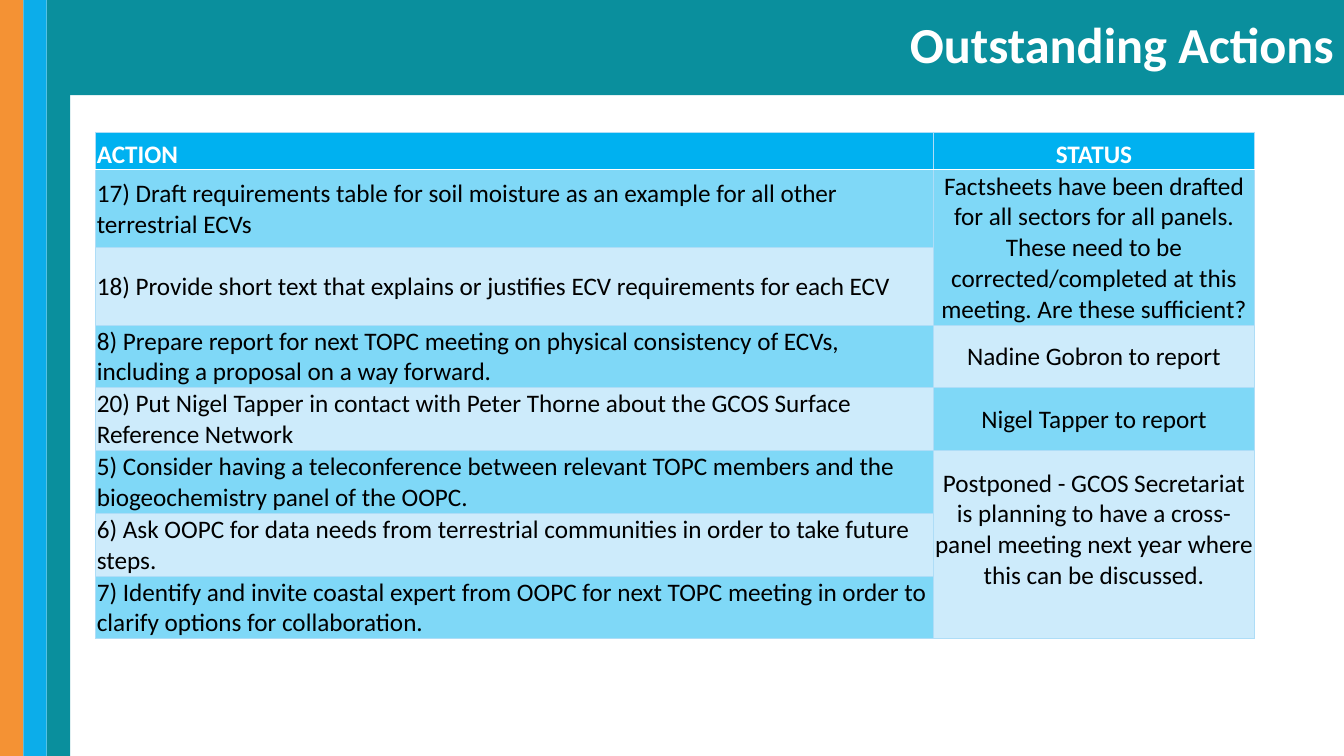
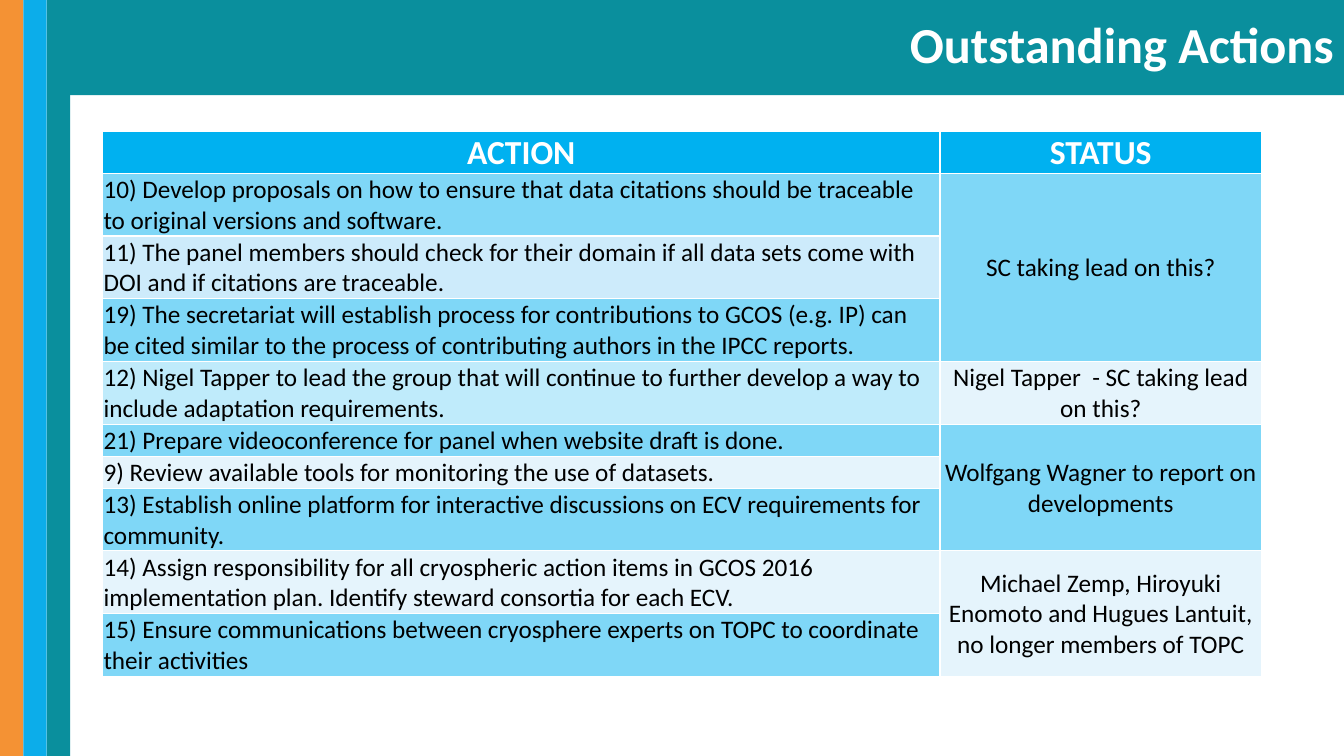
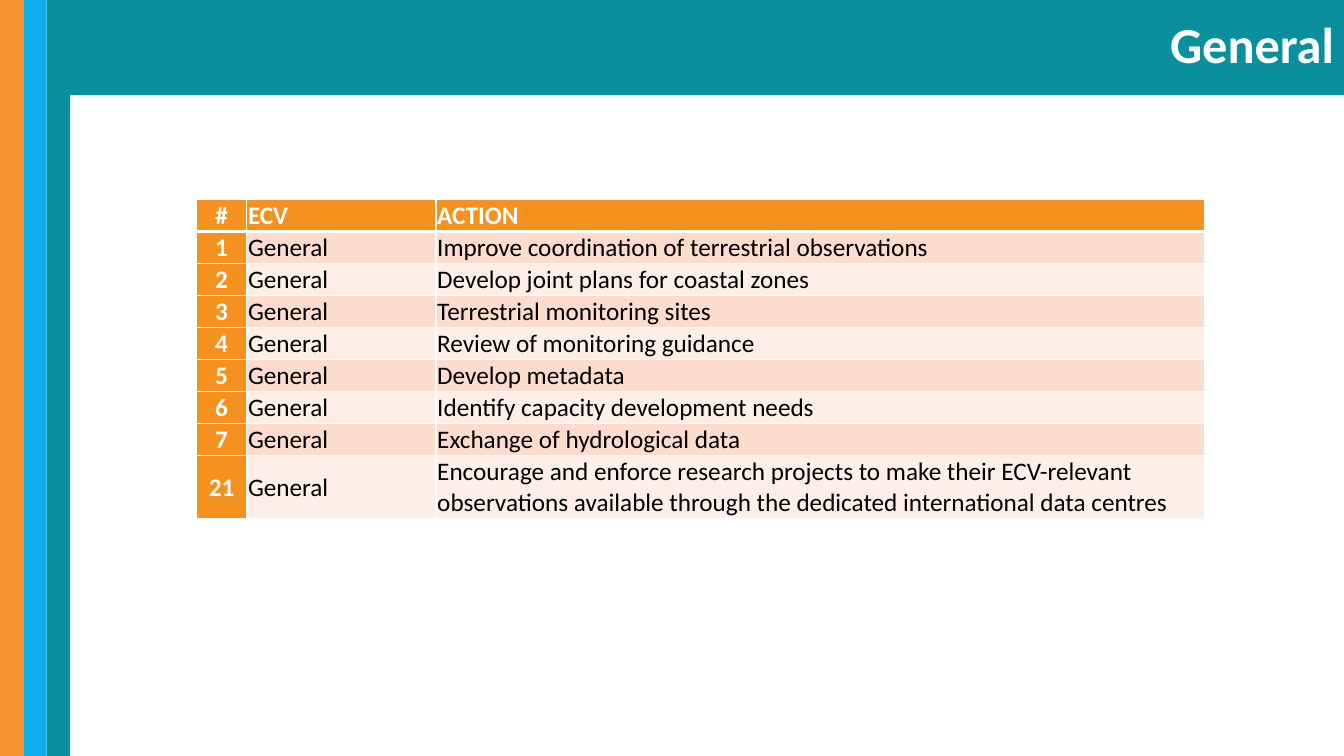
import lxml.etree
import pptx
import pptx.dml.color
import pptx.enum.shapes
import pptx.enum.text
import pptx.oxml.ns
import pptx.util

Cm, Pt = pptx.util.Cm, pptx.util.Pt
qn = pptx.oxml.ns.qn
ALIGN = pptx.enum.text.PP_ALIGN
ANCHOR = pptx.enum.text.MSO_ANCHOR
RECTANGLE = pptx.enum.shapes.MSO_SHAPE.RECTANGLE

WIDTH, HEIGHT = 33.87, 19.05
BAND_WIDTH = 0.59
FONT = "Calibri"
WHITE, BLACK = "FFFFFF", "000000"
ORANGE, SKY, TEAL = "F49234", "0CADEA", "0A8F9D"
HEADER_BLUE, MID_BLUE, PALE_BLUE, EDGE_BLUE = "00B1F0", "7FD8F7", "CDEBFB", "AEDDF7"
HEADER_ORANGE, PEACH, PALE_PEACH = "F5911E", "FBDCCD", "FDEEE8"
# A fill is a colour, or a colour with its opacity in percent
HALF_BLUE, QUARTER_BLUE, HALF_PALE = (HEADER_BLUE, 50), (HEADER_BLUE, 25), (PALE_BLUE, 50)

LINE, TWO_LINES = 0.8, 1.57
ACTION_COLUMNS = [21.11, 8.1]

BODY = {"name": FONT, "size": Pt(18), "bold": False, "color": BLACK}
HEADING = {**BODY, "bold": True, "color": WHITE}
BIG_HEADING = {**HEADING, "size": Pt(24)}
TITLE = {**HEADING, "size": Pt(36)}


def rgb(value):
    return pptx.dml.color.RGBColor.from_string(value)


def set_attributes(target, values):
    for name, value in values.items():
        setattr(target, name, value)


def write(frame, text, font, align):
    """Write each line of text as one paragraph."""
    for index, line in enumerate(text.split("\n")):
        para = frame.add_paragraph() if index else frame.paragraphs[0]
        para.alignment = align
        span = para.add_run()
        span.text = line
        set_attributes(span.font, {k: v for k, v in font.items() if k != "color"})
        span.font.color.rgb = rgb(font["color"])


def add_rectangle(slide, box, fill):
    shape = slide.shapes.add_shape(RECTANGLE, *map(Cm, box))
    shape.shadow.inherit = False
    shape.fill.solid()
    shape.fill.fore_color.rgb = rgb(fill)
    shape.line.fill.background()
    return shape


def add_framed_slide(deck, title):
    """Add a slide with the side bands and the title bar."""
    slide = deck.slides.add_slide(deck.slide_layouts[6])
    for index, fill in enumerate([ORANGE, SKY, TEAL]):
        add_rectangle(slide, (index * BAND_WIDTH, 0, BAND_WIDTH, HEIGHT), fill)
    left = 1.45
    frame = add_rectangle(slide, (left, 0, WIDTH - left, 2.4), TEAL).text_frame
    set_attributes(frame, {"word_wrap": True, "vertical_anchor": ANCHOR.MIDDLE})
    write(frame, title, TITLE, ALIGN.RIGHT)
    frame.paragraphs[0].line_spacing = 0.9
    return slide


def set_border(cell, side, color, width):
    properties = cell._tc.get_or_add_tcPr()
    line = lxml.etree.SubElement(properties, qn("a:ln" + side), w=str(Pt(width)))
    solid = lxml.etree.SubElement(line, qn("a:solidFill"))
    lxml.etree.SubElement(solid, qn("a:srgbClr"), val=color)


def add_grid(slide, place, widths, heights, border, header_width):
    """Add an unstyled table whose header is ruled off in white."""
    size = (sum(widths), sum(heights))
    table = slide.shapes.add_table(len(heights), len(widths), *map(Cm, place + size)).table
    set_attributes(table, {"first_row": False, "horz_banding": False})
    for column, width in zip(table.columns, widths):
        column.width = Cm(width)
    for number, (row, height) in enumerate(zip(table.rows, heights)):
        row.height = Cm(height)
        for cell in row.cells:
            for side in "LRTB":
                under_header = (number, side) in [(0, "B"), (1, "T")]
                set_border(cell, side, *((WHITE, header_width) if under_header else border))
    return table


def fill_cell(cell, text, fill, font=BODY, align=ALIGN.LEFT, anchor=ANCHOR.MIDDLE, bottom=0):
    inset = Cm(0.03)
    set_attributes(cell, {"margin_left": inset, "margin_right": inset, "margin_top": inset,
                          "margin_bottom": Cm(bottom), "vertical_anchor": anchor})
    color, opacity = (fill, 100) if isinstance(fill, str) else fill
    cell.fill.solid()
    cell.fill.fore_color.rgb = rgb(color)
    if opacity < 100:
        tint = cell._tc.tcPr.find(".//" + qn("a:solidFill") + "[last()]/" + qn("a:srgbClr"))
        tint = cell._tc.tcPr.find(qn("a:solidFill")).find(qn("a:srgbClr"))
        lxml.etree.SubElement(tint, qn("a:alpha"), val=str(opacity * 1000))
    write(cell.text_frame, text, font, align)


def add_action_table(slide, place, heights, border, heading, heading_align, anchor,
                     actions, statuses):
    """Actions are (text, fill); statuses are (rows spanned, text, fill, bottom inset)."""
    table = add_grid(slide, place, ACTION_COLUMNS, heights, border, 1)
    for column, (text, align) in enumerate([("ACTION", heading_align), ("STATUS", ALIGN.CENTER)]):
        fill_cell(table.cell(0, column), text, HEADER_BLUE, heading, align, ANCHOR.BOTTOM)
    for row, (text, fill) in enumerate(actions, 1):
        fill_cell(table.cell(row, 0), text, fill, anchor=anchor)
    row = 1
    for span, text, fill, bottom in statuses:
        cell = table.cell(row, 1)
        if span > 1:
            cell.merge(table.cell(row + span - 1, 1))
        fill_cell(cell, text, fill, align=ALIGN.CENTER, bottom=bottom)
        row += span


def add_general_table(slide, place, actions):
    heights = [LINE] * len(actions) + [TWO_LINES]
    table = add_grid(slide, place, [1.27, 4.77, 19.36], heights, (WHITE, 1), 3)
    aligns = [ALIGN.CENTER, ALIGN.LEFT, ALIGN.LEFT]
    rows = [("#", "ECV", "ACTION")] + [(number, "General", text) for number, text in actions]
    for row, texts in enumerate(rows):
        for column, (text, align) in enumerate(zip(texts, aligns)):
            is_heading = row == 0 or column == 0
            stripe = PEACH if row % 2 else PALE_PEACH
            fill_cell(table.cell(row, column), text, HEADER_ORANGE if is_heading else stripe,
                      HEADING if is_heading else BODY, align)


REQUIREMENT_ACTIONS = [
    "17) Draft requirements table for soil moisture as an example for all other terrestrial ECVs",
    "18) Provide short text that explains or justifies ECV requirements for each ECV",
    "8) Prepare report for next TOPC meeting on physical consistency of ECVs, including a "
    "proposal on a way forward.",
    "20) Put Nigel Tapper in contact with Peter Thorne about the GCOS Surface Reference Network",
    "5) Consider having a teleconference between relevant TOPC members and the biogeochemistry "
    "panel of the OOPC.",
    "6) Ask OOPC for data needs from terrestrial communities in order to take future steps.",
    "7) Identify and invite coastal expert from OOPC for next TOPC meeting in order to clarify "
    "options for collaboration.",
]
REQUIREMENT_STATUSES = [
    (2, "Factsheets have been drafted for all sectors for all panels.\n"
        "These need to be corrected/completed at this meeting. Are these sufficient?", MID_BLUE, 0),
    (1, "Nadine Gobron to report", PALE_BLUE, 0),
    (1, "Nigel Tapper to report", MID_BLUE, 0),
    (3, "Postponed - GCOS Secretariat is planning to have a cross-panel meeting next year "
        "where this can be discussed.", PALE_BLUE, 0.78),
]
CITATION_ACTIONS = [
    ("10) Develop proposals on how to ensure that data citations should be traceable to original "
     "versions and software.", HALF_BLUE),
    ("11) The panel members should check for their domain if all data sets come with DOI and if "
     "citations are traceable.", PALE_BLUE),
    ("19) The secretariat will establish process for contributions to GCOS (e.g. IP) can be cited "
     "similar to the process of contributing authors in the IPCC reports.", HALF_BLUE),
    ("12) Nigel Tapper to lead the group that will continue to further develop a way to include "
     "adaptation requirements.", QUARTER_BLUE),
    ("21) Prepare videoconference for panel when website draft is done.", HALF_BLUE),
    ("9) Review available tools for monitoring the use of datasets.", HALF_PALE),
    ("13) Establish online platform for interactive discussions on ECV requirements for "
     "community.", HALF_BLUE),
    ("14) Assign responsibility for all cryospheric action items in GCOS 2016 implementation "
     "plan. Identify steward consortia for each ECV.", HALF_PALE),
    ("15) Ensure communications between cryosphere experts on TOPC to coordinate their "
     "activities", HALF_BLUE),
]
CITATION_STATUSES = [
    (3, "SC taking lead on this?", HALF_BLUE, 0),
    (1, "Nigel Tapper  - SC taking lead on this?", HALF_PALE, 0),
    (3, "Wolfgang Wagner to report on developments", HALF_BLUE, 0),
    (2, "Michael Zemp, Hiroyuki Enomoto and Hugues Lantuit, no longer members of TOPC",
     HALF_PALE, 0),
]
GENERAL_ACTIONS = [
    ("1", "Improve coordination of terrestrial observations"),
    ("2", "Develop joint plans for coastal zones"),
    ("3", "Terrestrial monitoring sites"),
    ("4", "Review of monitoring guidance"),
    ("5", "Develop metadata"),
    ("6", "Identify capacity development needs"),
    ("7", "Exchange of hydrological data"),
    ("21", "Encourage and enforce research projects to make their ECV-relevant observations "
           "available through the dedicated international data centres"),
]


def main():
    deck = pptx.Presentation()
    set_attributes(deck, {"slide_width": Cm(WIDTH), "slide_height": Cm(HEIGHT)})

    striped = [(text, PALE_BLUE if index % 2 else MID_BLUE)
               for index, text in enumerate(REQUIREMENT_ACTIONS)]
    add_action_table(add_framed_slide(deck, "Outstanding Actions"), (2.41, 3.33),
                     [0.95] + [1.95] * 2 + [TWO_LINES] * 5, (EDGE_BLUE, 0.5),
                     HEADING, ALIGN.LEFT, ANCHOR.MIDDLE, striped, REQUIREMENT_STATUSES)

    add_action_table(add_framed_slide(deck, "Outstanding Actions"), (2.58, 3.3),
                     [1.06] + [TWO_LINES] * 4 + [LINE] * 2 + [TWO_LINES] * 3, (WHITE, 1),
                     BIG_HEADING, ALIGN.CENTER, ANCHOR.BOTTOM, CITATION_ACTIONS, CITATION_STATUSES)

    add_general_table(add_framed_slide(deck, "General"), (4.95, 5.03), GENERAL_ACTIONS)
    deck.save("out.pptx")


if __name__ == "__main__":
    main()
